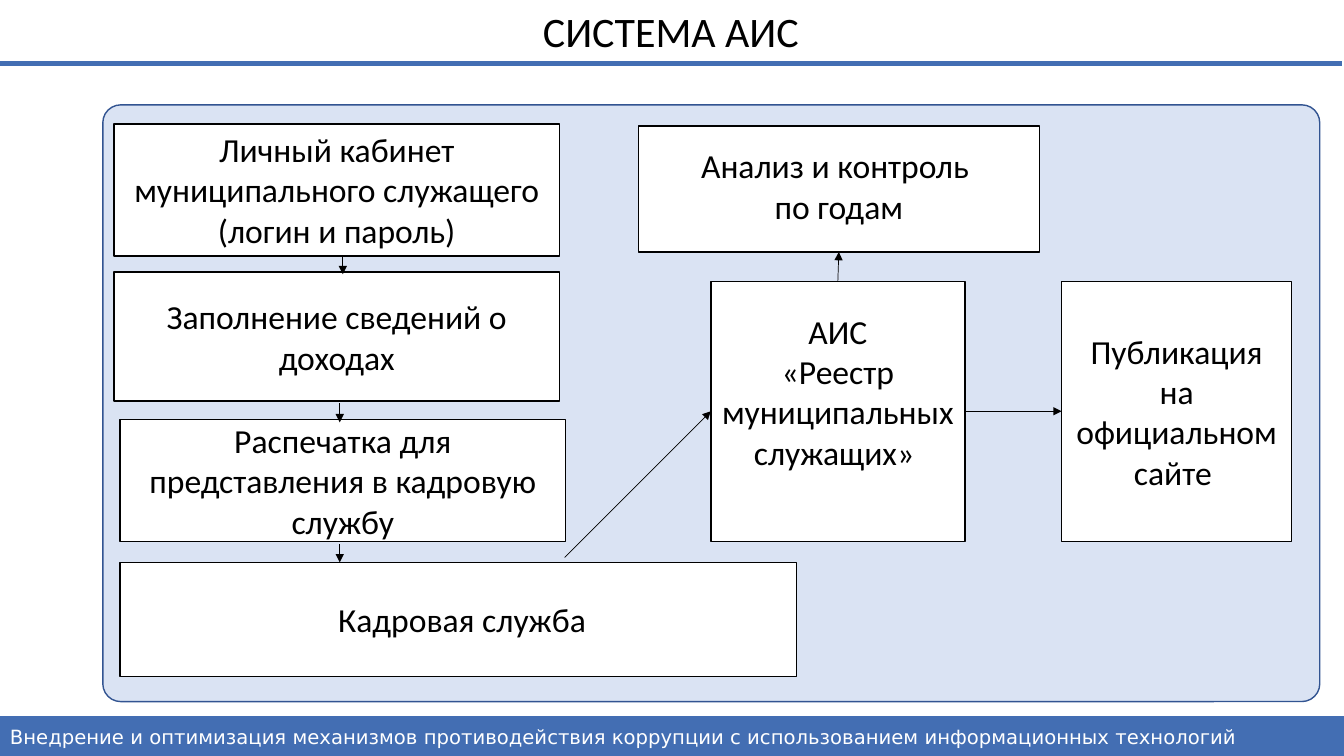
from dataclasses import dataclass

import pptx
import pptx.util
import pptx.dml.color
import pptx.enum.shapes
import pptx.enum.text
import pptx.oxml.ns
from lxml import etree

Inches = pptx.util.Inches
Pt = pptx.util.Pt
Kind = pptx.enum.shapes.MSO_SHAPE
Align = pptx.enum.text.PP_ALIGN
Anchor = pptx.enum.text.MSO_ANCHOR


# Colours, fonts and type sizes
@dataclass(frozen=True)
class Theme:
    ink: str = "000000"
    paper: str = "FFFFFF"
    blue: str = "436EB3"
    pale: str = "DAE3F3"
    edge: str = "325491"
    font: str = "Calibri"
    foot_font: str = "DejaVu Sans"
    title: float = 30
    body: float = 24
    foot: float = 14


@dataclass(frozen=True)
class Box:
    name: str
    left: float
    top: float
    width: float
    height: float
    lines: tuple[str, ...]
    anchor: Anchor = Anchor.MIDDLE
    above: float = 0.05
    below: float = 0.05


@dataclass(frozen=True)
class Arrow:
    start: tuple[float, float]
    end: tuple[float, float]
    source: tuple[str, int] | None = None
    target: tuple[str, int] | None = None


THEME = Theme()
WIDE, HIGH = 13.33, 7.5
TOP, LEFT, BOTTOM, RIGHT = range(4)

BOXES = [
    Box("login", 1.13, 1.23, 4.42, 1.31,
        ("Личный кабинет муниципального служащего (логин и пароль)",), Anchor.TOP),
    Box("income", 1.13, 2.7, 4.42, 1.28, ("Заполнение сведений о доходах",)),
    Box("publish", 10.53, 2.79, 2.28, 2.58, ("Публикация на официальном сайте ",)),
    Box("registry", 7.05, 2.79, 2.52, 2.58,
        ("АИС", "«Реестр муниципальных служащих» "), below=0.45),
    Box("print", 1.19, 4.16, 4.42, 1.21,
        ("Распечатка для представления в кадровую службу",)),
    Box("staff", 1.19, 5.58, 6.71, 1.13, (" Кадровая служба",)),
    Box("review", 6.33, 1.25, 3.98, 1.25,
        ("Анализ и контроль ", "по годам"), Anchor.TOP, above=0.19),
]

ARROWS = [
    Arrow((3.4, 2.54), (3.4, 2.72)),
    Arrow((3.37, 4), (3.37, 4.19)),
    Arrow((3.37, 5.4), (3.37, 5.58)),
    Arrow((9.57, 4.08), (10.53, 4.08), ("registry", RIGHT), ("publish", LEFT)),
    Arrow((8.31, 2.79), (8.32, 2.5), ("registry", TOP), ("review", BOTTOM)),
    Arrow((5.6, 5.53), (7.05, 4.08), target=("registry", LEFT)),
]


def tint(code: str) -> pptx.dml.color.RGBColor:
    return pptx.dml.color.RGBColor.from_string(code)


def write(shape, lines: tuple[str, ...], size: float, color: str = THEME.ink,
          font: str = THEME.font, align: Align = Align.CENTER,
          anchor: Anchor = Anchor.MIDDLE, above: float = 0.05,
          below: float = 0.05, after: float = 0) -> None:
    frame = shape.text_frame
    frame.word_wrap = True
    frame.auto_size = pptx.enum.text.MSO_AUTO_SIZE.NONE
    frame.vertical_anchor = anchor
    frame.margin_left = frame.margin_right = Inches(0.1)
    frame.margin_top, frame.margin_bottom = Inches(above), Inches(below)
    for i, line in enumerate(lines):
        para = frame.add_paragraph() if i else frame.paragraphs[0]
        para.alignment = align
        para.space_before, para.space_after = Pt(0), Pt(after)
        run = para.add_run()
        run.text = line
        run.font.name, run.font.size = font, Pt(size)
        run.font.color.rgb = tint(color)


def block(slide, kind: Kind, left: float, top: float, width: float,
          height: float, fill: str, edge: str):
    shape = slide.shapes.add_shape(
        kind, Inches(left), Inches(top), Inches(width), Inches(height))
    shape.shadow.inherit = False
    shape.fill.solid()
    shape.fill.fore_color.rgb = tint(fill)
    shape.line.color.rgb = tint(edge)
    shape.line.width = Pt(1)
    return shape


def rule(slide, start: tuple[float, float], end: tuple[float, float],
         color: str, width: float):
    line = slide.shapes.add_connector(
        pptx.enum.shapes.MSO_CONNECTOR.STRAIGHT,
        Inches(start[0]), Inches(start[1]), Inches(end[0]), Inches(end[1]))
    line.line.color.rgb = tint(color)
    line.line.width = Pt(width)
    etree.SubElement(line._element.spPr, pptx.oxml.ns.qn("a:effectLst"))
    return line


def link(slide, arrow: Arrow, shapes: dict) -> None:
    line = rule(slide, arrow.start, arrow.end, THEME.ink, 0.5)
    etree.SubElement(line.line._get_or_add_ln(),
                     pptx.oxml.ns.qn("a:tailEnd"), type="triangle")
    if arrow.source:
        name, side = arrow.source
        line.begin_connect(shapes[name], side)
    if arrow.target:
        name, side = arrow.target
        line.end_connect(shapes[name], side)


def main() -> None:
    deck = pptx.Presentation()
    deck.slide_width, deck.slide_height = Inches(WIDE), Inches(HIGH)
    slide = deck.slides.add_slide(deck.slide_layouts[5])

    # Title and its rule
    title = slide.shapes.title
    title.left, title.top = Inches(0), Inches(0)
    title.width, title.height = Inches(13.31), Inches(0.61)
    write(title, ("СИСТЕМА АИС",), THEME.title, anchor=Anchor.TOP)
    rule(slide, (0, 0.63), (13.31, 0.63), THEME.blue, 3)

    # Panel behind the flow
    panel = block(slide, Kind.ROUNDED_RECTANGLE, 1.02, 1.04, 12.07, 5.92,
                  THEME.pale, THEME.edge)
    panel.adjustments[0] = 0.03

    # Steps of the flow
    shapes = {}
    for box in BOXES:
        shape = block(slide, Kind.RECTANGLE, box.left, box.top, box.width,
                      box.height, THEME.paper, THEME.ink)
        write(shape, box.lines, THEME.body, anchor=box.anchor,
              above=box.above, below=box.below)
        shapes[box.name] = shape

    # Arrows between the steps
    for arrow in ARROWS:
        link(slide, arrow, shapes)

    # Footer band
    band = block(slide, Kind.RECTANGLE, 0, 7.11, WIDE, 0.39,
                 THEME.blue, THEME.blue)
    write(band, ("Внедрение и оптимизация механизмов противодействия коррупции "
                 "с использованием информационных технологий",),
          THEME.foot, THEME.paper, THEME.foot_font, Align.LEFT, after=4)

    deck.save("out.pptx")


if __name__ == "__main__":
    main()
